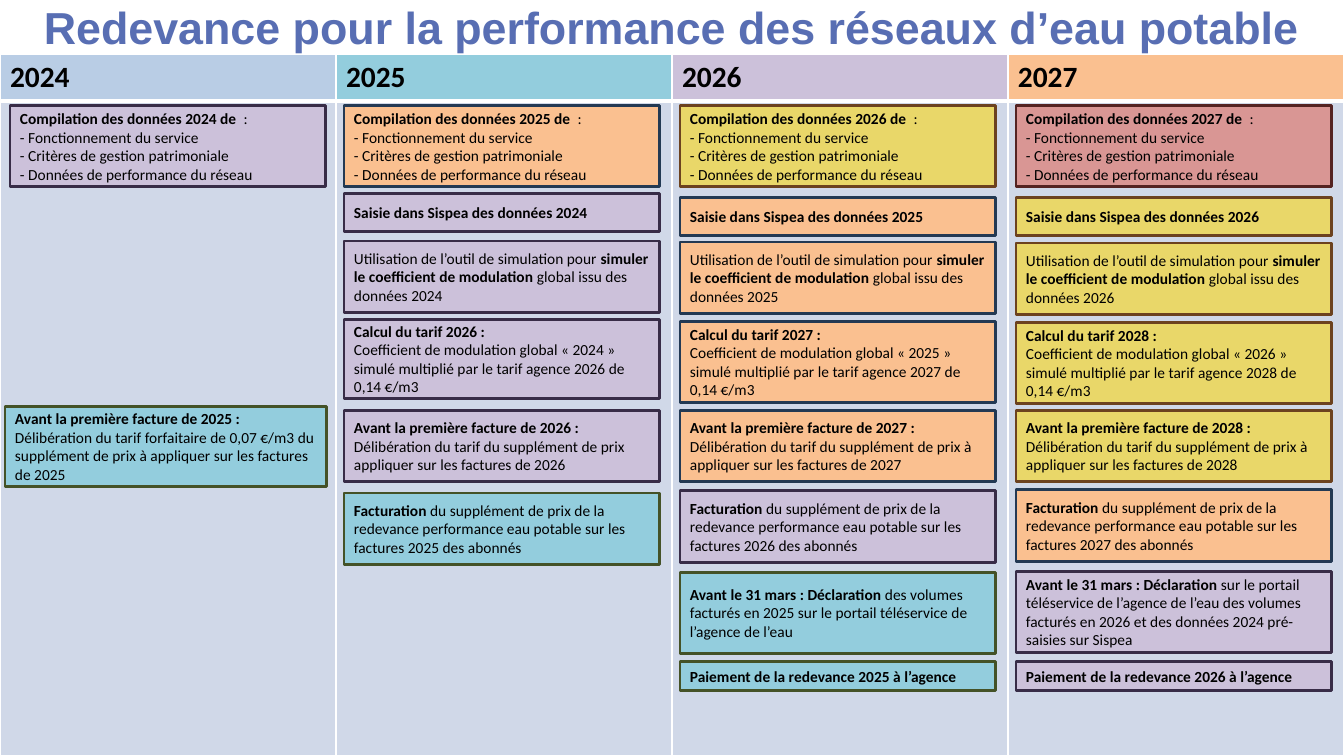
from dataclasses import dataclass

from lxml import etree
from pptx import Presentation
from pptx.dml.color import RGBColor
from pptx.enum.shapes import MSO_SHAPE
from pptx.enum.text import MSO_ANCHOR, MSO_AUTO_SIZE, PP_ALIGN
from pptx.oxml.ns import qn
from pptx.slide import Slide
from pptx.table import _Cell
from pptx.text.text import Font, TextFrame
from pptx.util import Inches, Pt

RECTANGLE = MSO_SHAPE.RECTANGLE
MIDDLE = MSO_ANCHOR.MIDDLE
CENTER, LEFT = PP_ALIGN.CENTER, PP_ALIGN.LEFT
NO_AUTOFIT = MSO_AUTO_SIZE.NONE
TITLE_ONLY = 5

YEARS = (2024, 2025, 2026, 2027)
SLIDE_WIDTH, SLIDE_HEIGHT = Inches(13.3333), Inches(7.5)
COLUMN = SLIDE_WIDTH // len(YEARS)
UNIT = SLIDE_HEIGHT // 750  # the page is 750 grid rows high
TITLE_ROWS, HEADER_ROWS = 54, 46
TITLE = "Redevance pour la performance des réseaux d’eau potable"


@dataclass(frozen=True)
class Tint:
    fill: str
    line: str


@dataclass(frozen=True)
class Theme:
    """Colours and type; the tints follow the year of the data."""
    tints: dict[int, Tint]
    title: str = "586EB3"
    text: str = "000000"
    border: str = "FFFFFF"
    body: str = "D0D8E8"
    title_font: str = "Arial"
    text_font: str = "Calibri"
    title_size: int = 32
    header_size: int = 21
    card_size: int = 11
    line_width: int = 2


THEME = Theme({
    2022: Tint("B9CDE5", "B9CDE5"),
    2023: Tint("93CDDD", "445227"),
    2024: Tint("CCC1DA", "382C47"),
    2025: Tint("FAC090", "233953"),
    2026: Tint("E9D769", "6C421F"),
    2027: Tint("D99694", "542322"),
})


@dataclass(frozen=True)
class Step:
    """A task repeated over the years; its tint is that of `lag` years earlier.

    Text between ** marks is bold; tops, height, inset and width are grid units.
    """
    text: str
    lag: int
    height: int
    tops: dict[int, int]
    inset: int = 8
    width: int = 313


COMPILATION = (
    "**Compilation des données {year} de  **:\n- Fonctionnement du service\n"
    "- Critères de gestion patrimoniale\n- Données de performance du réseau"
)
CALCULATION = (
    "**Calcul du tarif {following} :**\nCoefficient de modulation global « {previous} » "
    "simulé multiplié par le tarif agence {following} de 0,14 €/m3"
)
BEFORE_BILL = "**Avant la première facture de {following} :**\n"
DECLARATION = "**Avant le 31 mars : Déclaration **"

STEPS = (
    Step(COMPILATION, 0, 80, {2024: 105}, inset=10),
    Step(COMPILATION, 0, 80, {2025: 105, 2026: 105, 2027: 105}),
    Step("**Saisie dans Sispea des données {previous}**", 1, 38,
         {2025: 192, 2026: 196, 2027: 196}),
    Step("Utilisation de l’outil de simulation pour **simuler le coefficient de "
         "modulation **global issu des données {previous}", 1, 71,
         {2025: 239, 2026: 240, 2027: 241}),
    Step(CALCULATION, 1, 78, {2025: 317}),
    Step(CALCULATION, 1, 80, {2026: 319, 2027: 320}),
    Step(BEFORE_BILL + "Délibération du tarif forfaitaire de 0,07 €/m3 du supplément "
         "de prix à appliquer sur les factures de {following}", 1, 80,
         {2024: 403}, inset=5, width=319),
    Step(BEFORE_BILL + "Délibération du tarif du supplément de prix appliquer sur "
         "les factures de {following}", 1, 71, {2025: 407}),
    Step(BEFORE_BILL + "Délibération du tarif du supplément de prix à appliquer sur "
         "les factures de {following}", 1, 71, {2026: 407, 2027: 407}),
    Step("**Facturation **du supplément de prix de la redevance performance eau "
         "potable sur les factures {year} des abonnés", 2, 71,
         {2025: 489, 2026: 487, 2027: 486}),
    Step(DECLARATION + "des volumes facturés en {previous} sur le portail téléservice "
         "de l’agence de l’eau", 3, 80, {2026: 568}),
    Step(DECLARATION + "sur le portail téléservice de l’agence de l’eau des volumes "
         "facturés en {previous} et des données 2024 pré-saisies sur Sispea", 3, 80,
         {2027: 567}),
    Step("**Paiement de la redevance {previous} à l’agence**", 3, 29,
         {2026: 656, 2027: 656}),
)


def style_font(font: Font, name: str, size: int, color: str, bold: bool) -> None:
    font.name, font.size, font.bold = name, Pt(size), bold
    font.color.rgb = RGBColor.from_string(color)


def write_marked_text(frame: TextFrame, text: str) -> None:
    """Write one paragraph per line, with bold between ** marks."""
    for index, line in enumerate(text.split("\n")):
        para = frame.add_paragraph() if index else frame.paragraphs[0]
        para.alignment = LEFT
        for position, part in enumerate(line.split("**")):
            if part:
                span = para.add_run()
                span.text = part
                style_font(span.font, THEME.text_font, THEME.card_size,
                           THEME.text, position % 2 == 1)


def draw_title(page: Slide) -> None:
    box = page.shapes.title
    box.left, box.top, box.width, box.height = 0, -UNIT, SLIDE_WIDTH, TITLE_ROWS * UNIT
    frame = box.text_frame
    frame.text = TITLE
    frame.word_wrap, frame.auto_size = True, NO_AUTOFIT
    frame.vertical_anchor = MIDDLE
    frame.margin_left = frame.margin_right = 12 * UNIT
    frame.margin_top = frame.margin_bottom = 6 * UNIT
    para = frame.paragraphs[0]
    para.alignment = CENTER
    style_font(para.runs[0].font, THEME.title_font, THEME.title_size, THEME.title, True)


def paint_cell(cell: _Cell, fill: str, top: int, bottom: int) -> None:
    """Set the borders, widths in points, and then the fill."""
    properties = cell._tc.get_or_add_tcPr()
    for side, width in (("L", 1), ("R", 1), ("T", top), ("B", bottom)):
        line = etree.SubElement(properties, qn(f"a:ln{side}"), w=str(Pt(width)))
        solid = etree.SubElement(line, qn("a:solidFill"))
        etree.SubElement(solid, qn("a:srgbClr"), val=THEME.border)
    cell.fill.solid()
    cell.fill.fore_color.rgb = RGBColor.from_string(fill)


def draw_calendar(page: Slide) -> None:
    top = TITLE_ROWS * UNIT
    table = page.shapes.add_table(2, len(YEARS), 0, top, SLIDE_WIDTH,
                                  SLIDE_HEIGHT - top).table
    table.rows[0].height = HEADER_ROWS * UNIT
    table.rows[1].height = SLIDE_HEIGHT - top - HEADER_ROWS * UNIT
    for index, year in enumerate(YEARS):
        table.columns[index].width = COLUMN
        header = table.cell(0, index)
        header.text_frame.text = str(year)
        style_font(header.text_frame.paragraphs[0].runs[0].font, THEME.text_font,
                   THEME.header_size, THEME.text, True)
        paint_cell(header, THEME.tints[year - 2].fill, 1, 3)
        paint_cell(table.cell(1, index), THEME.body, 3, 1)


def draw_step(page: Slide, step: Step) -> None:
    for year, top in step.tops.items():
        left = YEARS.index(year) * COLUMN + step.inset * UNIT
        box = page.shapes.add_shape(RECTANGLE, left, top * UNIT,
                                    step.width * UNIT, step.height * UNIT)
        tint = THEME.tints[year - step.lag]
        box.shadow.inherit = False
        box.fill.solid()
        box.fill.fore_color.rgb = RGBColor.from_string(tint.fill)
        box.line.color.rgb = RGBColor.from_string(tint.line)
        box.line.width = Pt(THEME.line_width)
        box.text_frame.word_wrap = True
        box.text_frame.vertical_anchor = MIDDLE
        write_marked_text(box.text_frame, step.text.format(
            previous=year - 1, year=year, following=year + 1))


def main() -> None:
    deck = Presentation()
    deck.slide_width, deck.slide_height = SLIDE_WIDTH, SLIDE_HEIGHT
    page = deck.slides.add_slide(deck.slide_layouts[TITLE_ONLY])
    draw_title(page)
    draw_calendar(page)
    for step in STEPS:
        draw_step(page, step)
    deck.save("out.pptx")


if __name__ == "__main__":
    main()
